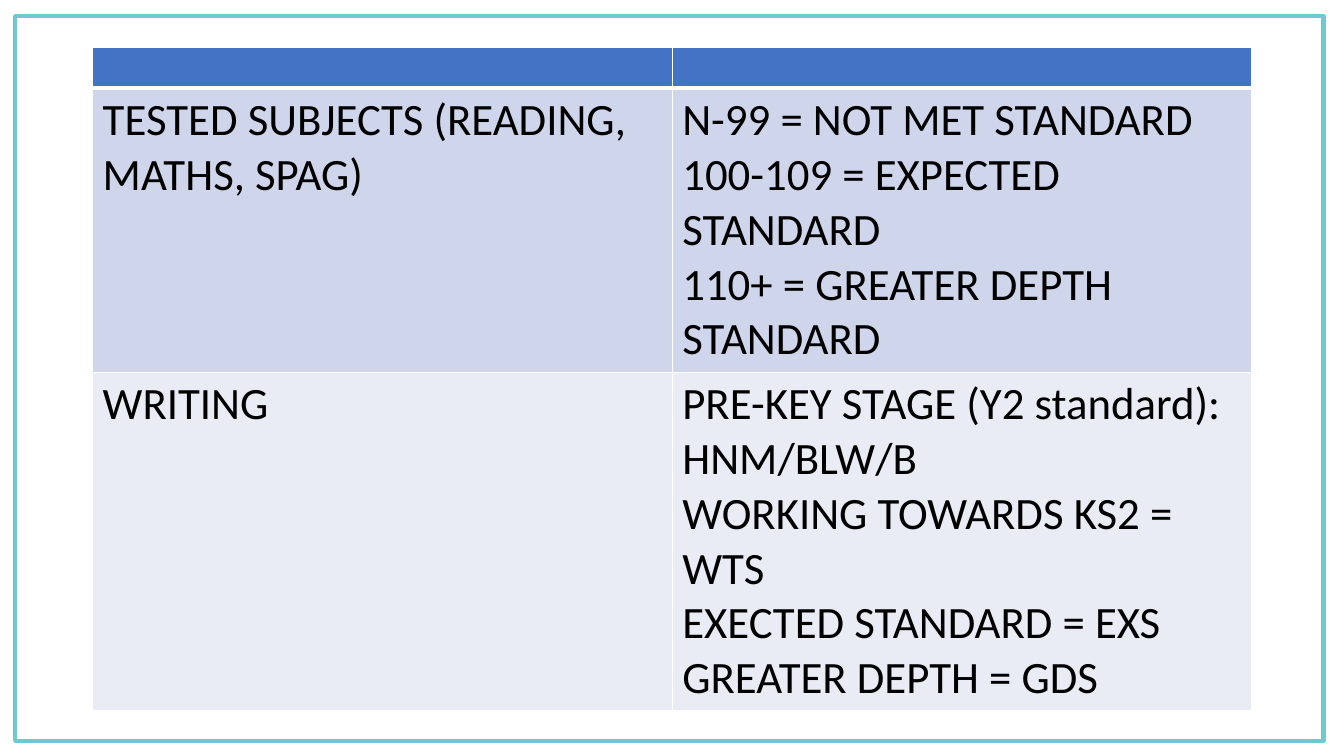
from lxml.etree import SubElement as Sub
from pptx import Presentation
from pptx.dml.color import RGBColor as RGB
from pptx.enum.shapes import MSO_SHAPE as Kind
from pptx.oxml.ns import qn
from pptx.util import Pt

ROWS = [
    ("4472C4", 29.2, [[], []]),
    ("CFD5EA", 202.5, [
        ["TESTED SUBJECTS (READING, MATHS, SPAG)"],
        ["N-99 = NOT MET STANDARD",
         "100-109 = EXPECTED STANDARD",
         "110+ = GREATER DEPTH STANDARD"]]),
    ("E9EBF5", 241.6, [
        ["WRITING"],
        ["PRE-KEY STAGE (Y2 standard): HNM/BLW/B",
         "WORKING TOWARDS KS2 = WTS",
         "EXECTED STANDARD = EXS",
         "GREATER DEPTH = GDS"]]),
]
FRAME = (10.8, 11.5, 934.6, 517.7)
LEFT, TOP, COL = 66.2, 33.8, 414
FONT = {"name": "Calibri", "size": Pt(32), "bold": False}
WHITE, BLACK, TEAL = "FFFFFF", "000000", "6ECACF"


def paint(color, code):
    color.rgb = RGB.from_string(code)


def edge(cell, row):
    props = cell._tc.get_or_add_tcPr()
    wide = {"lnT": 3 if row == 1 else 1, "lnB": 3 if row == 0 else 1}
    for side in ("lnL", "lnR", "lnT", "lnB"):
        line = Sub(props, qn("a:" + side), w=str(Pt(wide.get(side, 1))))
        fill = Sub(line, qn("a:solidFill"))
        Sub(fill, qn("a:srgbClr"), val=WHITE)


def write(frame, lines):
    for i, text in enumerate(lines):
        para = frame.paragraphs[0] if i == 0 else frame.add_paragraph()
        run = para.add_run()
        run.text = text
        for key, value in FONT.items():
            setattr(run.font, key, value)
        paint(run.font.color, BLACK)


deck = Presentation()
deck.slide_width, deck.slide_height = Pt(960), Pt(540)
slide = deck.slides.add_slide(deck.slide_layouts[6])

frame = slide.shapes.add_shape(Kind.RECTANGLE, *map(Pt, FRAME))
frame.shadow.inherit = False
frame.fill.background()
frame.line.width = Pt(3)
paint(frame.line.color, TEAL)

high = sum(tall for _, tall, _ in ROWS)
grid = slide.shapes.add_table(
    len(ROWS), 2, Pt(LEFT), Pt(TOP), Pt(2 * COL), Pt(high)).table
for col in grid.columns:
    col.width = Pt(COL)
for r, (shade, tall, cells) in enumerate(ROWS):
    grid.rows[r].height = Pt(tall)
    for c, lines in enumerate(cells):
        cell = grid.cell(r, c)
        edge(cell, r)
        cell.fill.solid()
        paint(cell.fill.fore_color, shade)
        write(cell.text_frame, lines)

deck.save("out.pptx")
